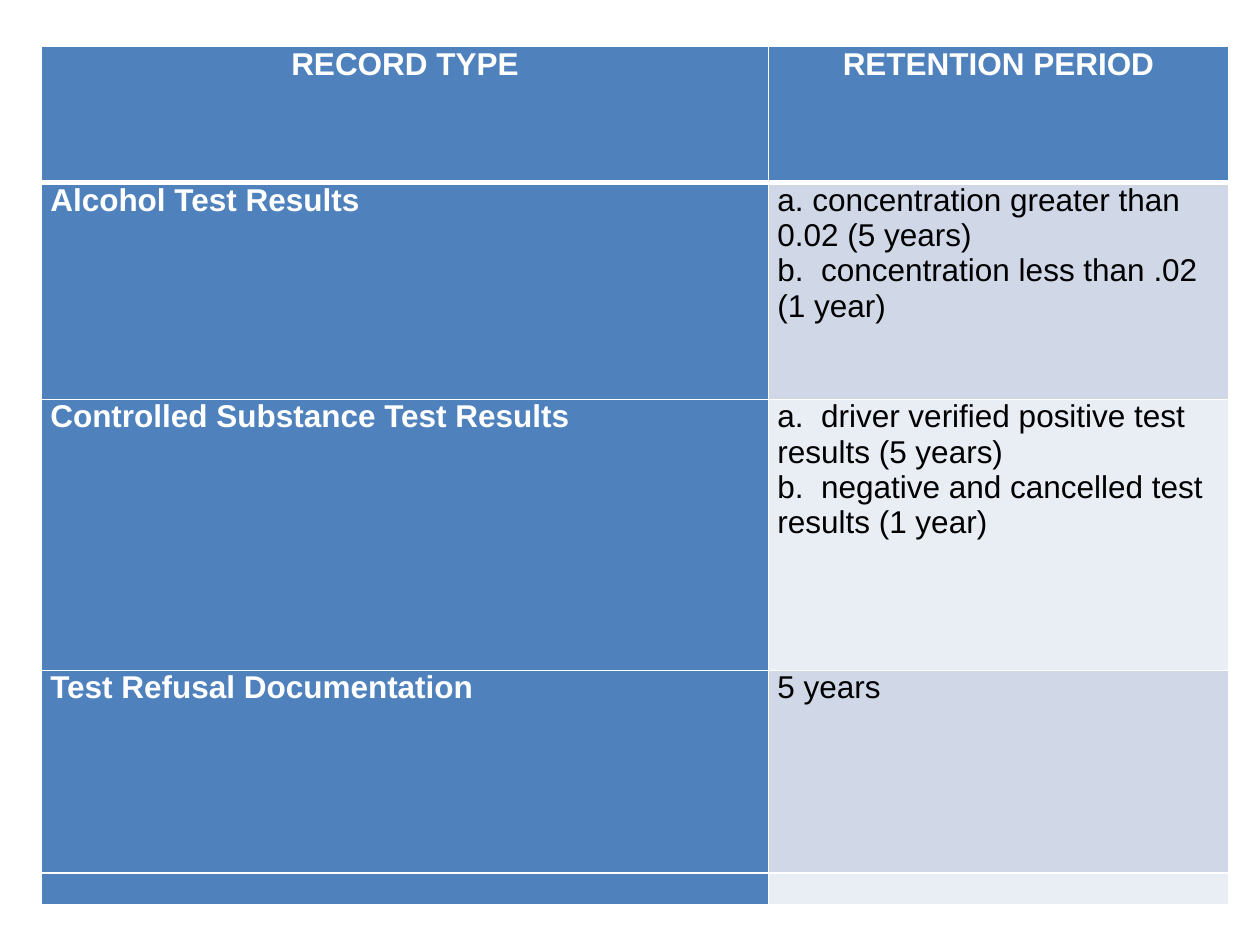
"""Build a slide with a table of record types and their retention periods."""
from dataclasses import dataclass

from lxml.etree import SubElement
from pptx import Presentation
from pptx.dml.color import RGBColor as Rgb
from pptx.enum.text import PP_ALIGN as Align
from pptx.oxml.ns import qn
from pptx.util import Inches, Pt


@dataclass(frozen=True)
class Theme:
    font: str = "Arial"
    size: int = 18
    spacer_size: int = 12
    accent: str = "4F81BD"
    bands: tuple = ("D0D8E8", "E9EDF4")
    light: str = "FFFFFF"
    dark: str = "000000"
    line: int = 1
    header_line: int = 3


THEME = Theme()
COLUMN_WIDTHS = (5.77, 3.65)
ROW_HEIGHTS = (1.08, 1.72, 2.15, 1.61, 0.25)
RECORDS = (
    (("RECORD TYPE",), ("RETENTION PERIOD",)),
    (("Alcohol Test Results",),
     ("a. concentration greater than 0.02 (5 years)",
      "b.  concentration less than .02 (1 year)")),
    (("Controlled Substance Test Results",),
     ("a.  driver verified positive test results (5 years)",
      "b.  negative and cancelled test results (1 year)")),
    (("Test Refusal Documentation",), ("5 years",)),
    ((), ()),
)


def add_border(cell, side, width):
    properties = cell._tc.get_or_add_tcPr()
    line = SubElement(properties, qn(f"a:{side}"), w=str(Pt(width)))
    fill = SubElement(line, qn("a:solidFill"))
    SubElement(fill, qn("a:srgbClr"), val=THEME.light)


def style_cell(cell, row, color):
    for side in ("lnL", "lnR", "lnT", "lnB"):
        under_header = (row, side) in ((0, "lnB"), (1, "lnT"))
        add_border(cell, side, THEME.header_line if under_header else THEME.line)
    cell.fill.solid()
    cell.fill.fore_color.rgb = Rgb.from_string(color)
    cell.margin_left = cell.margin_right = Inches(0.07)
    cell.margin_top = cell.margin_bottom = 0


def write_cell(cell, lines, color, bold, align):
    frame = cell.text_frame
    for index, text in enumerate(lines):
        para = frame.add_paragraph() if index else frame.paragraphs[0]
        para.alignment = align
        span = para.add_run()
        span.text = text
        span.font.name = THEME.font
        span.font.size = Pt(THEME.size)
        span.font.bold = bold
        span.font.color.rgb = Rgb.from_string(color)
    if not lines:
        SubElement(frame.paragraphs[0]._p, qn("a:endParaRPr"),
                   sz=str(THEME.spacer_size * 100))


def add_retention_table(page):
    table = page.shapes.add_table(
        len(ROW_HEIGHTS), len(COLUMN_WIDTHS), Inches(0.33), Inches(0.37),
        Inches(sum(COLUMN_WIDTHS)), Inches(sum(ROW_HEIGHTS))).table
    table.first_col = True
    for column, width in zip(table.columns, COLUMN_WIDTHS):
        column.width = Inches(width)
    for row, height in zip(table.rows, ROW_HEIGHTS):
        row.height = Inches(height)
    for row, record in enumerate(RECORDS):
        for column, lines in enumerate(record):
            cell = table.cell(row, column)
            heading = row == 0 or column == 0
            style_cell(cell, row, THEME.accent if heading else THEME.bands[(row - 1) % 2])
            write_cell(cell, lines, THEME.light if heading else THEME.dark,
                       heading, Align.LEFT if row else Align.CENTER)


def main():
    deck = Presentation()
    deck.slide_width, deck.slide_height = Inches(10), Inches(7.5)
    page = deck.slides.add_slide(deck.slide_layouts[6])
    add_retention_table(page)
    deck.save("out.pptx")


if __name__ == "__main__":
    main()
